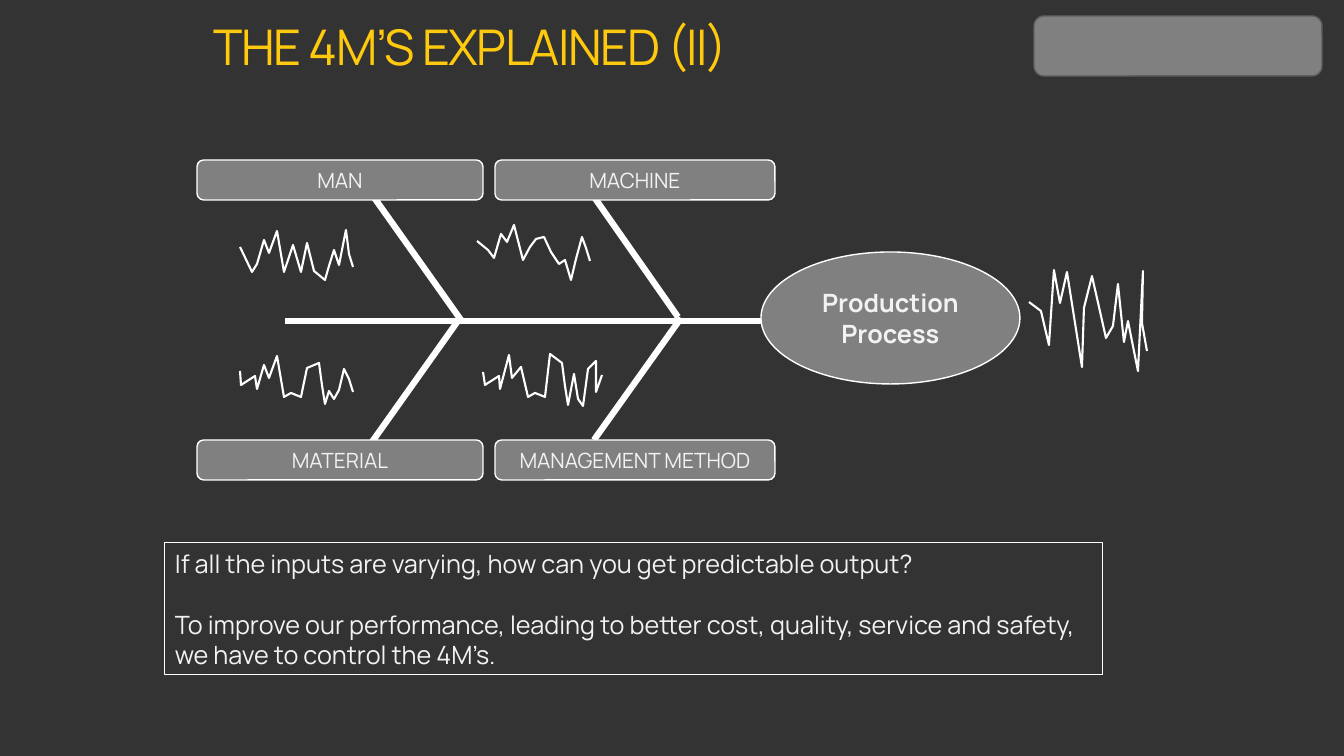
"""Builds the 4M fishbone slide, where varying inputs give a varying output."""
from lxml import etree
from pptx import Presentation, util as u
from pptx.dml.color import RGBColor
from pptx.enum import shapes, text
from pptx.oxml.ns import qn

PX = 914400 / 100.8
FONT = "Manrope"
COLORS = {"background": "333333", "panel": "808080", "edge": "5F5F5F",
          "line": "FFFFFF", "text": "F2F2F2", "title": "FFC90D"}


def px(*lengths):
    return [u.Emu(round(length * PX)) for length in lengths]


def style(shape, fill, line, width, content=(), **formats):
    shape.shadow.inherit = False
    if fill:
        shape.fill.solid()
        shape.fill.fore_color.rgb = RGBColor.from_string(COLORS[fill])
    else:
        shape.fill.background()
    if line:
        shape.line.color.rgb = RGBColor.from_string(COLORS[line])
        shape.line.width = u.Pt(width)
    else:
        shape.line.fill.background()
    frame = shape.text_frame
    frame.word_wrap = True
    frame.vertical_anchor = formats.pop("anchor", text.MSO_ANCHOR.MIDDLE)
    alignment = formats.pop("alignment", text.PP_ALIGN.CENTER)
    color = formats.pop("color", "text")
    for index, words in enumerate(content):
        paragraph = frame.add_paragraph() if index else frame.paragraphs[0]
        paragraph.alignment = alignment
        run = paragraph.add_run()
        run.text = words
        run.font.color.rgb = RGBColor.from_string(COLORS[color])
        for name, value in {"name": FONT, **formats}.items():
            setattr(run.font, name, value)


presentation = Presentation()
presentation.slide_width, presentation.slide_height = px(1344, 756)
slide = presentation.slides.add_slide(presentation.slide_layouts[6])
slide.background.fill.solid()
slide.background.fill.fore_color.rgb = RGBColor.from_string(COLORS["background"])

bones = [
    (285, 321, 764, 321),
    (461, 320, 373, 196),
    (678, 317, 592, 194),
    (460, 318, 372, 442),
    (681, 318, 594, 440),
]
for bone in bones:
    connector = slide.shapes.add_connector(shapes.MSO_CONNECTOR.STRAIGHT, *px(*bone))
    connector.line.color.rgb = RGBColor.from_string(COLORS["line"])
    connector.line.width = u.Pt(4.5)
    etree.SubElement(connector._element.spPr, qn("a:effectLst"))

rows = [(160, ("MAN", "MACHINE")), (440, ("MATERIAL", "MANAGEMENT METHOD"))]
columns = [(197, 286), (495, 280)]
for top, labels in rows:
    for (left, width), label in zip(columns, labels):
        card = slide.shapes.add_shape(
            shapes.MSO_SHAPE.ROUNDED_RECTANGLE, *px(left, top, width, 40))
        style(card, "panel", "line", 1, [label], size=u.Pt(15))

process = slide.shapes.add_shape(shapes.MSO_SHAPE.OVAL, *px(761, 252, 259, 132))
style(process, "panel", "line", 1, ["Production Process"], size=u.Pt(18), bold=True)

variations = {
    "man": [
        (240, 247), (252, 272), (257, 264), (264, 240), (269, 253), (277, 231),
        (284, 272), (293, 245), (301, 272), (307, 243), (314, 271), (325, 280),
        (329, 266), (334, 250), (339, 265), (346, 230), (349, 254), (353, 267)],
    "material": [
        (240, 371), (241, 385), (255, 376), (257, 389), (264, 365), (269, 378),
        (277, 356), (284, 397), (291, 393), (301, 397), (307, 368), (319, 363),
        (322, 385), (325, 404), (329, 391), (334, 399), (339, 390), (344, 369),
        (349, 379), (353, 392)],
    "machine": [
        (477, 241), (488, 250), (494, 258), (501, 234), (507, 242), (514, 225),
        (523, 260), (530, 247), (536, 239), (544, 237), (551, 252), (559, 264),
        (565, 260), (571, 280), (576, 259), (582, 237), (586, 248), (590, 261)],
    "method": [
        (483, 372), (485, 385), (499, 376), (500, 389), (509, 355), (512, 378),
        (521, 367), (528, 397), (535, 393), (545, 397), (550, 354), (562, 363),
        (565, 386), (568, 405), (574, 374), (578, 399), (583, 406), (588, 369),
        (596, 361), (596, 392), (602, 375)],
    "output": [
        (1029, 302), (1041, 311), (1049, 345), (1054, 270), (1060, 303),
        (1067, 272), (1082, 367), (1084, 308), (1092, 276), (1097, 298),
        (1106, 338), (1113, 326), (1118, 284), (1124, 342), (1128, 321),
        (1138, 371), (1143, 271), (1142, 323), (1147, 351)],
}
for points in variations.values():
    builder = slide.shapes.build_freeform(*points[0], scale=PX)
    builder.add_line_segments(points[1:], close=False)
    style(builder.convert_to_shape(), None, "line", 1.5)

message = slide.shapes.add_shape(shapes.MSO_SHAPE.RECTANGLE, *px(165, 543, 938, 132))
style(message, None, "line", 0.75, [
    "If all the inputs are varying, how can you get predictable output?",
    "To improve our performance, leading to better cost, quality, service and safety, "
    "we have to control the 4M’s.",
], size=u.Pt(18), anchor=text.MSO_ANCHOR.TOP, alignment=text.PP_ALIGN.LEFT)
message.text_frame.paragraphs[1].space_before = u.Pt(22)

title = slide.shapes.add_textbox(*px(204, 23, 937, 58))
style(title, None, None, 0, ["THE 4M’S EXPLAINED (II)"], size=u.Pt(35.1),
      color="title", anchor=text.MSO_ANCHOR.TOP, alignment=text.PP_ALIGN.LEFT)
heading = title.text_frame.paragraphs[0]
heading.line_spacing = 0.8
heading.runs[0].font._element.set("spc", "-100")

badge = slide.shapes.add_shape(
    shapes.MSO_SHAPE.ROUNDED_RECTANGLE, *px(1034, 16, 288, 60))
style(badge, "panel", "edge", 1)

presentation.save("out.pptx")
